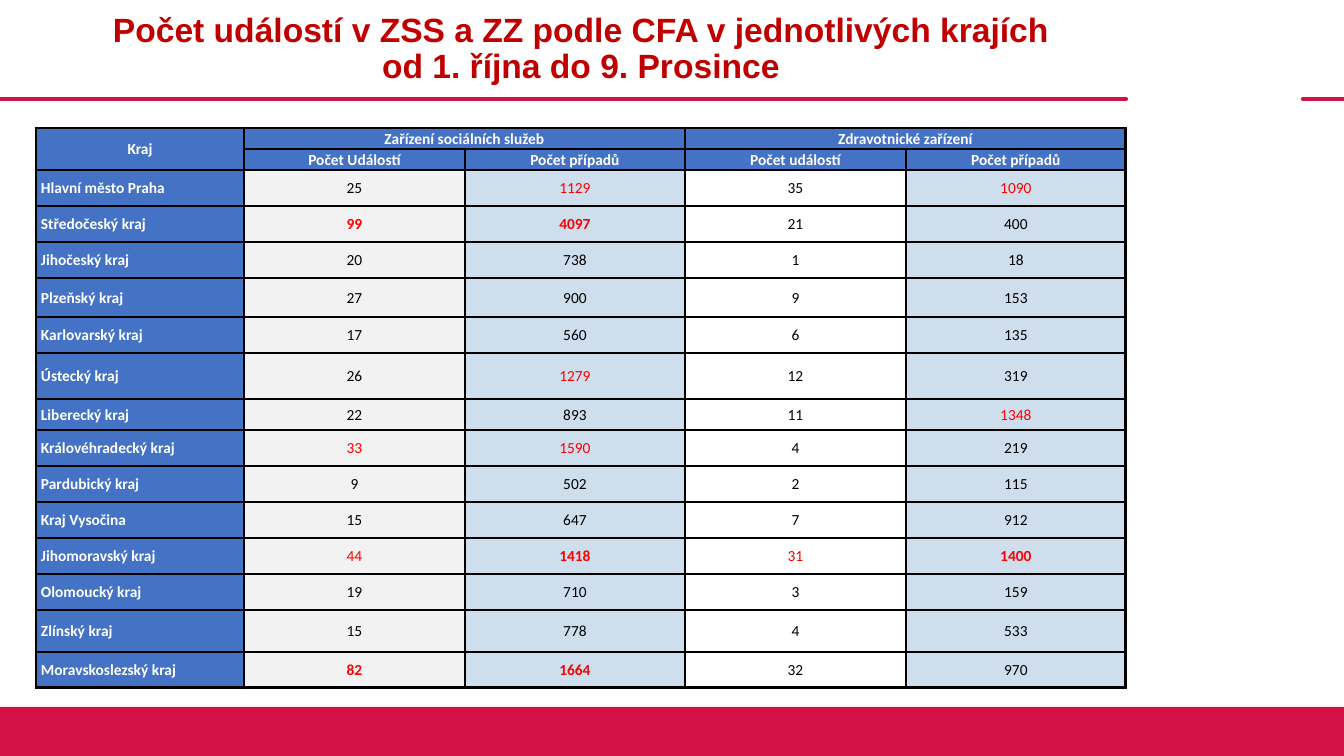
from dataclasses import dataclass

from lxml import etree
from pptx import Presentation
from pptx import util as u
from pptx.dml.color import RGBColor
from pptx.enum import shapes, text
from pptx.oxml import ns

EMU_PER_INCH = 914400
PX_PER_INCH = 100.8
CRIMSON, TITLE_RED, BLUE = "D31145", "C00000", "4472C4"
BLACK, WHITE, RED = "000000", "FFFFFF", "FF0000"
COUNT_FILLS = ("F2F2F2", "CFDEED", WHITE, "CFDEED")
COLUMN_WIDTHS = (208, 221, 220, 221, 220)
HEADER_HEIGHT = 21
LEFT, TABLE_TOP, RULE_Y = 36, 128, 99


@dataclass(frozen=True)
class Region:
    name: str
    counts: tuple[int, ...]
    height: int = 36
    red: tuple[int, ...] = ()
    bold: tuple[int, ...] = ()


@dataclass(frozen=True)
class Heading:
    label: str
    row: int
    column: int
    last_row: int
    last_column: int
    anchor: text.MSO_ANCHOR = text.MSO_ANCHOR.MIDDLE


REGIONS = (
    Region("Hlavní město Praha", (25, 1129, 35, 1090), red=(1, 3)),
    Region("Středočeský kraj", (99, 4097, 21, 400), red=(0, 1), bold=(0, 1)),
    Region("Jihočeský kraj", (20, 738, 1, 18)),
    Region("Plzeňský kraj", (27, 900, 9, 153), height=39),
    Region("Karlovarský kraj", (17, 560, 6, 135)),
    Region("Ústecký kraj", (26, 1279, 12, 319), height=46, red=(1,)),
    Region("Liberecký kraj", (22, 893, 11, 1348), height=31, red=(3,)),
    Region("Královéhradecký kraj", (33, 1590, 4, 219), red=(0, 1)),
    Region("Pardubický kraj", (9, 502, 2, 115)),
    Region("Kraj Vysočina", (15, 647, 7, 912)),
    Region("Jihomoravský kraj", (44, 1418, 31, 1400), red=(0, 1, 2, 3), bold=(1, 3)),
    Region("Olomoucký kraj", (19, 710, 3, 159)),
    Region("Zlínský kraj", (15, 778, 4, 533), height=42),
    Region("Moravskoslezský kraj", (82, 1664, 32, 970), red=(0, 1), bold=(0, 1)),
)

HEADINGS = (
    Heading("Kraj", 0, 0, 1, 0),
    Heading("Zařízení sociálních služeb", 0, 1, 0, 2, text.MSO_ANCHOR.TOP),
    Heading("Zdravotnické zařízení", 0, 3, 0, 4, text.MSO_ANCHOR.TOP),
    Heading("Počet Událostí", 1, 1, 1, 1),
    Heading("Počet případů", 1, 2, 1, 2),
    Heading("Počet událostí", 1, 3, 1, 3),
    Heading("Počet případů", 1, 4, 1, 4),
)


def px(length: int) -> u.Emu:
    return u.Emu(round(length * EMU_PER_INCH / PX_PER_INCH))


def rgb(color: str) -> RGBColor:
    return RGBColor.from_string(color)


def style(paragraph, font: str, size: int, color: str, bold: bool, align, spacing: float) -> None:
    paragraph.alignment = align
    paragraph.line_spacing = spacing
    paragraph.font.name = font
    paragraph.font.size = u.Pt(size)
    paragraph.font.bold = bold
    paragraph.font.color.rgb = rgb(color)


def draw_rule(slide, start: int, end: int) -> None:
    rule = slide.shapes.add_connector(
        shapes.MSO_CONNECTOR.STRAIGHT, px(start), px(RULE_Y), px(end), px(RULE_Y))
    rule.line.color.rgb = rgb(CRIMSON)
    rule.line.width = u.Pt(3)
    rule.line._get_or_add_ln().set("cap", "rnd")
    etree.SubElement(rule._element.spPr, ns.qn("a:effectLst"))


def draw_footer(slide) -> None:
    footer = slide.shapes.add_shape(
        shapes.MSO_SHAPE.RECTANGLE, 0, px(707), px(1344), px(49))
    footer.shadow.inherit = False
    footer.fill.solid()
    footer.fill.fore_color.rgb = rgb(CRIMSON)
    footer.line.fill.background()


def draw_title(slide) -> None:
    frame = slide.shapes.add_textbox(px(LEFT), 0, px(sum(COLUMN_WIDTHS)), px(RULE_Y)).text_frame
    frame.word_wrap = True
    frame.vertical_anchor = text.MSO_ANCHOR.MIDDLE
    title = frame.paragraphs[0]
    title.text = "Počet událostí v ZSS a ZZ podle CFA v jednotlivých krajích\vod 1. října do 9. Prosince"
    style(title, "Arial", 24, TITLE_RED, True, text.PP_ALIGN.CENTER, 0.9)


def frame_cell(cell, fill: str) -> None:
    properties = cell._tc.get_or_add_tcPr()
    for side in ("lnL", "lnR", "lnT", "lnB"):
        border = etree.SubElement(properties, ns.qn(f"a:{side}"), w=str(u.Pt(2.25)))
        solid = etree.SubElement(border, ns.qn("a:solidFill"))
        etree.SubElement(solid, ns.qn("a:srgbClr"), val=BLACK)
    cell.fill.solid()
    cell.fill.fore_color.rgb = rgb(fill)
    cell.margin_left = cell.margin_right = px(5)
    cell.margin_top = cell.margin_bottom = 0


def write_cell(cell, words: str, color: str = WHITE, bold: bool = True,
               align=text.PP_ALIGN.CENTER, anchor=text.MSO_ANCHOR.MIDDLE) -> None:
    cell.vertical_anchor = anchor
    paragraph = cell.text_frame.paragraphs[0]
    paragraph.text = words
    style(paragraph, "Calibri", 11, color, bold, align, 1.07)


def draw_table(slide) -> None:
    heights = (HEADER_HEIGHT, HEADER_HEIGHT, *(region.height for region in REGIONS))
    table = slide.shapes.add_table(
        len(heights), len(COLUMN_WIDTHS), px(LEFT), px(TABLE_TOP),
        px(sum(COLUMN_WIDTHS)), px(sum(heights))).table
    table.first_row = table.horz_banding = False
    for column, width in zip(table.columns, COLUMN_WIDTHS):
        column.width = px(width)
    for index, height in enumerate(heights):
        table.rows[index].height = px(height)
        fills = (BLUE, *(COUNT_FILLS if index > 1 else [BLUE] * 4))
        for cell, fill in zip(table.rows[index].cells, fills):
            frame_cell(cell, fill)

    for heading in HEADINGS:
        cell = table.cell(heading.row, heading.column)
        last = table.cell(heading.last_row, heading.last_column)
        if (heading.row, heading.column) != (heading.last_row, heading.last_column):
            cell.merge(last)
        write_cell(cell, heading.label, anchor=heading.anchor)

    for row, region in enumerate(REGIONS, start=2):
        write_cell(table.cell(row, 0), region.name, align=text.PP_ALIGN.LEFT)
        for index, count in enumerate(region.counts):
            color = RED if index in region.red else BLACK
            write_cell(table.cell(row, index + 1), str(count), color, index in region.bold)


def main() -> None:
    deck = Presentation()
    deck.slide_width, deck.slide_height = px(1344), px(756)
    slide = deck.slides.add_slide(deck.slide_layouts[6])
    draw_rule(slide, 0, 1126)
    draw_rule(slide, 1303, 1344)
    draw_footer(slide)
    draw_title(slide)
    draw_table(slide)
    deck.save("out.pptx")


if __name__ == "__main__":
    main()
